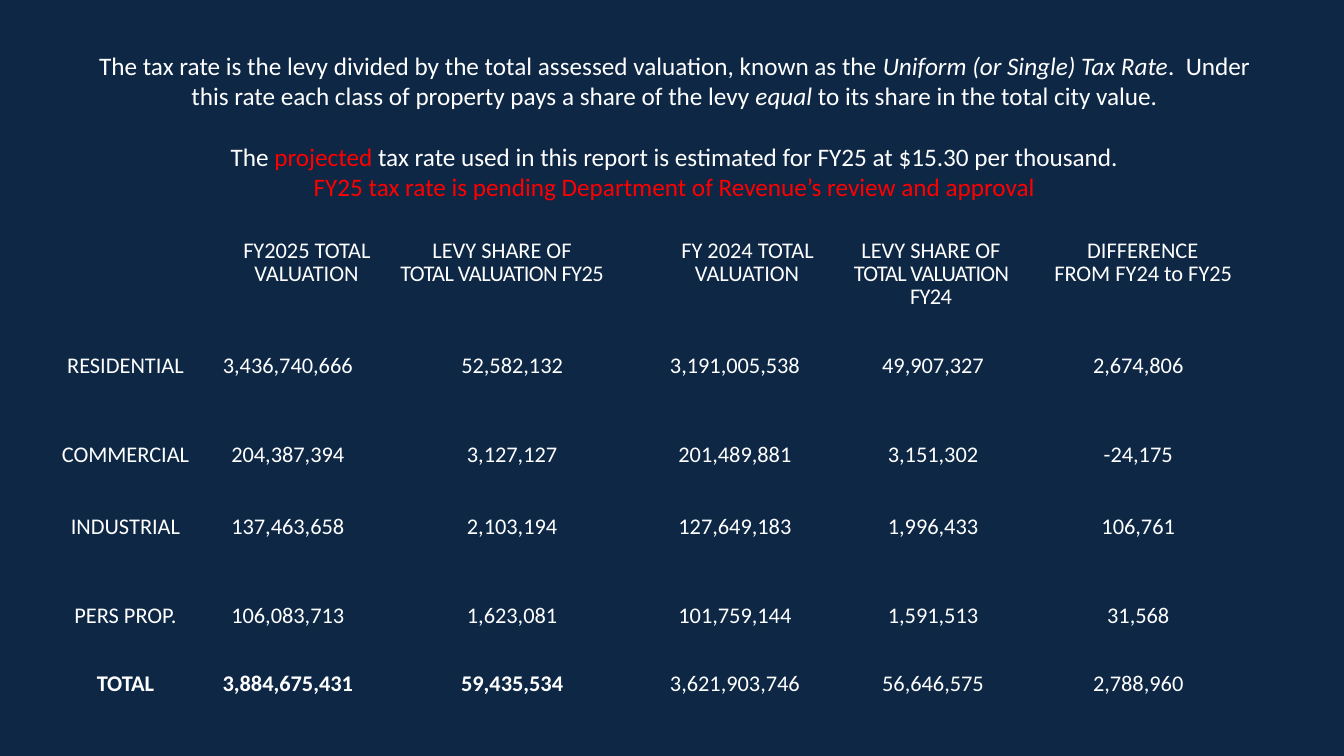
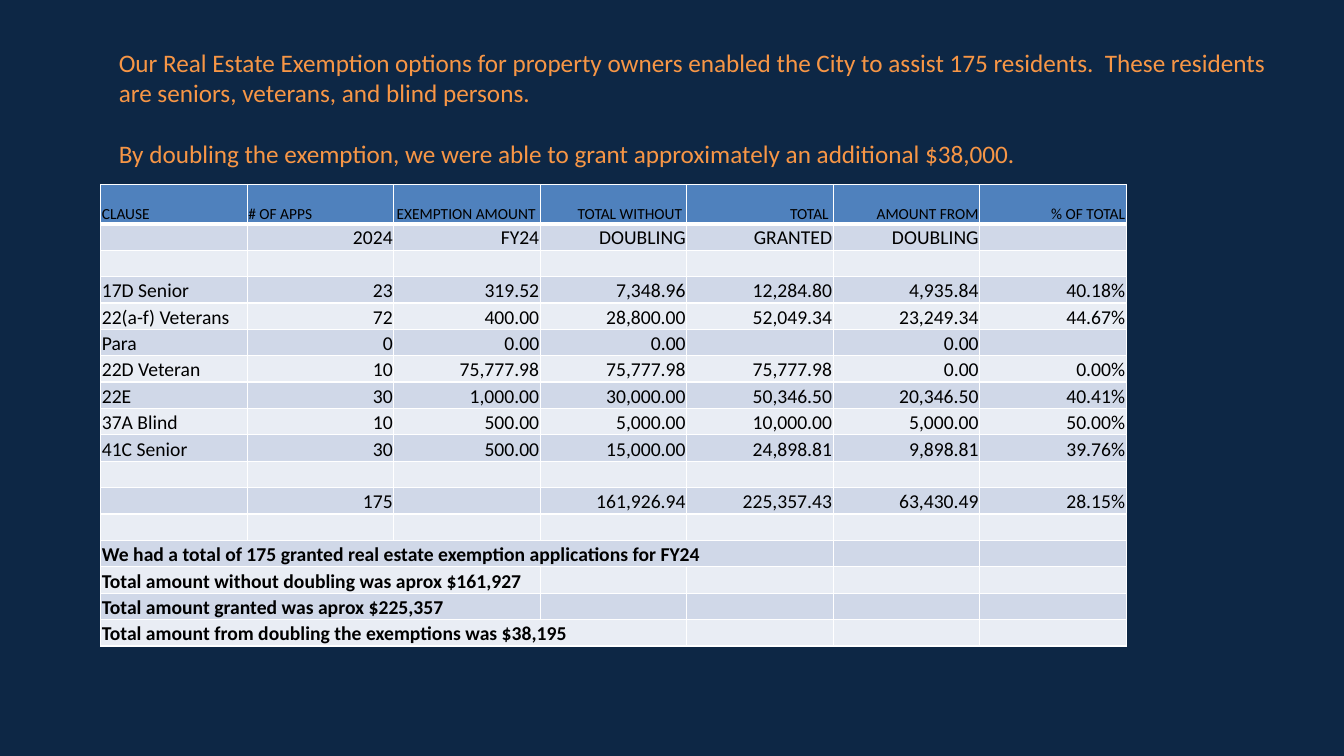
from lxml import etree
from pptx import Presentation
from pptx.dml.color import RGBColor
from pptx.enum.text import MSO_ANCHOR, PP_ALIGN
from pptx.oxml.ns import qn
from pptx.util import Inches, Pt

LEFT, MID, RIGHT = PP_ALIGN.LEFT, PP_ALIGN.CENTER, PP_ALIGN.RIGHT
TOP, BOTTOM = MSO_ANCHOR.TOP, MSO_ANCHOR.BOTTOM
FONT = "Calibri"
NAVY, WHITE, BLACK, RED, ORANGE = "0D2745", "FFFFFF", "000000", "FF0000", "F79646"
BLUE, BANDS = "4F81BD", ("E9EDF4", "D0D8E8")
PLAIN = "{2D5ABB26-0587-4C30-8999-92F81FD0307C}"  # table style: no fill, no grid
GAP = 21.6  # points between the blocks of an intro text

RATE = [
    [("The tax rate is the levy divided by the total assessed valuation, known as the ", ""),
     ("Uniform (or Single) Tax Rate", "italic"),
     (".  Under this rate each class of property pays a share of the levy ", ""),
     ("equal ", "italic"),
     ("to its share in the total city value.", "")],
    [("The ", ""), ("projected ", "red"),
     ("tax rate used in this report is estimated for FY25 at $15.30 per thousand.", "")],
    [("FY25 tax rate is pending Department of Revenue’s review and approval", "red")],
]

# Two lines each: text, left indent, right indent, letter spacing in points
HEADS = [
    [("FY2025 TOTAL", 0.38, 0, 0), ("VALUATION", 0.37, 0, 0)],
    [("LEVY SHARE OF", 0, 0.2, 0), ("TOTAL VALUATION FY25", 0.11, 0.31, -0.4)],
    [("FY 2024 TOTAL", 0.25, 0, 0), ("VALUATION", 0.24, 0, 0)],
    [("LEVY SHARE OF", 0, 0.04, 0), ("TOTAL VALUATION FY24", 0.09, 0.13, -0.5)],
    [("DIFFERENCE", 0.09, 0, 0), ("FROM FY24 to FY25", 0.1, 0, 0)],
]
LEVY = [
    ["RESIDENTIAL", "3,436,740,666", "52,582,132", "3,191,005,538", "49,907,327", "2,674,806"],
    ["COMMERCIAL", "204,387,394", "3,127,127", "201,489,881", "3,151,302", "-24,175"],
    ["INDUSTRIAL", "137,463,658", "2,103,194", "127,649,183", "1,996,433", "106,761"],
    ["PERS PROP.", "106,083,713", "1,623,081", "101,759,144", "1,591,513", "31,568"],
    ["TOTAL", "3,884,675,431", "59,435,534", "3,621,903,746", "56,646,575", "2,788,960"],
]

HELP = [
    "Our Real Estate Exemption options for property owners enabled the City to assist "
    "175 residents.  These residents are seniors, veterans, and blind persons.",
    "By doubling the exemption, we were able to grant approximately an additional $38,000.",
]
CLAUSES = [
    ["CLAUSE", "# OF APPS", "EXEMPTION AMOUNT ", "TOTAL WITHOUT ", "TOTAL ", "AMOUNT FROM",
     "% OF TOTAL"],
    ["", "2024", "FY24", "DOUBLING", "GRANTED", "DOUBLING", ""],
    [""] * 7,
    ["17D Senior", "23", "319.52", "7,348.96", "12,284.80", "4,935.84", "40.18%"],
    ["22(a-f) Veterans", "72", "400.00", "28,800.00", "52,049.34", "23,249.34", "44.67%"],
    ["Para", "0", "0.00", "0.00", "", "0.00", ""],
    ["22D Veteran", "10", "75,777.98", "75,777.98", "75,777.98", "0.00", "0.00%"],
    ["22E", "30", "1,000.00", "30,000.00", "50,346.50", "20,346.50", "40.41%"],
    ["37A Blind", "10", "500.00", "5,000.00", "10,000.00", "5,000.00", "50.00%"],
    ["41C Senior", "30", "500.00", "15,000.00", "24,898.81", "9,898.81", "39.76%"],
    [""] * 7,
    ["", "175", "", "161,926.94", "225,357.43", "63,430.49", "28.15%"],
    [""] * 7,
]
NOTES = [  # text, columns spanned
    ("We had a total of 175 granted real estate exemption applications for FY24", 5),
    ("Total amount without doubling was aprox $161,927", 3),
    ("Total amount granted was aprox $225,357", 3),
    ("Total amount from doubling the exemptions was $38,195", 4),
]


def rgb(code):
    return RGBColor.from_string(code)


def style(run, size, tint, bold=False, italic=False):
    font = run.font
    font.name, font.size, font.bold, font.italic = FONT, Pt(size), bold, italic
    font.color.rgb = rgb(tint)


def add_text(slide, left, top, width, height):
    box = slide.shapes.add_textbox(Inches(left), Inches(top), Inches(width), Inches(height))
    box.text_frame.word_wrap = True
    return box.text_frame


def add_grid(slide, left, top, cols, rows):
    frame = slide.shapes.add_table(len(rows), len(cols), Inches(left), Inches(top),
                                   Inches(sum(cols)), Inches(sum(rows)))
    table = frame.table
    table.first_row = table.horz_banding = False
    table._tbl.tblPr.find(qn("a:tableStyleId")).text = PLAIN
    for col, width in zip(table.columns, cols):
        col.width = Inches(width)
    for row, height in zip(table.rows, rows):
        row.height = Inches(height)
    return table


def pad(cell, inset, anchor):
    cell.margin_left = cell.margin_right = cell.margin_top = Inches(inset)
    cell.margin_bottom = 0
    cell.vertical_anchor = anchor


def fill_cell(cell, text, size, tint, align, bold=False):
    pad(cell, 0.01, BOTTOM)
    cell.text = text
    para = cell.text_frame.paragraphs[0]
    para.alignment = align
    for run in para.runs:
        style(run, size, tint, bold)
    if not text:  # keeps an empty row from growing
        etree.SubElement(para._p, qn("a:endParaRPr"), sz=str(size * 100))


def fill_head(cell, lines):
    pad(cell, 0, TOP)
    cell.text = "\n".join(line[0] for line in lines)
    for para, line, pitch in zip(cell.text_frame.paragraphs, lines, (14.9, 16.4)):
        _, left, right, space = line
        para.alignment, para.line_spacing = MID, Pt(pitch)
        props = para._p.get_or_add_pPr()
        props.set("marL", str(Inches(left)))
        props.set("marR", str(Inches(right)))
        run = para.runs[0]
        style(run, 16, WHITE)
        run.font._element.set("spc", str(round(space * 100)))


def edge(cell, top, bottom):
    """White borders: one point at the sides, given widths above and below."""
    props = cell._tc.get_or_add_tcPr()
    for tag, width in (("lnL", 1), ("lnR", 1), ("lnT", top), ("lnB", bottom)):
        line = etree.SubElement(props, qn("a:" + tag), w=str(Pt(width)))
        fill = etree.SubElement(line, qn("a:solidFill"))
        etree.SubElement(fill, qn("a:srgbClr"), val=WHITE)


def rate_slide(slide):
    frame = add_text(slide, 0.96, 0.49, 11.46, 1.53)
    frame.margin_left = frame.margin_right = frame.margin_bottom = 0
    frame.margin_top = Inches(0.01)
    for i, parts in enumerate(RATE):
        para = frame.add_paragraph() if i else frame.paragraphs[0]
        para.alignment = MID
        if i == 1:
            para.space_before = Pt(GAP)
        for text, look in parts:
            run = para.add_run()
            run.text = text
            style(run, 18, RED if look == "red" else WHITE, italic=look == "italic")

    table = add_grid(slide, 0.58, 2.42, [1.33, 1.89, 2.56, 1.86, 2.07, 2],
                     [0.84, 0.51, 0.88, 0.71, 0.89, 0.67])
    for c, lines in enumerate(HEADS, 1):
        fill_head(table.cell(0, c), lines)
    for r, row in enumerate(LEVY, 1):
        for c, text in enumerate(row):
            bold = r == len(LEVY) and c < 3
            fill_cell(table.cell(r, c), text, 16, WHITE, MID, bold)


def help_slide(slide):
    rows = CLAUSES + [[text] + [""] * 6 for text, _ in NOTES]
    table = add_grid(slide, 1, 1.83, [10.17 / 7] * 7, [0.39] + [4.19 / 16] * 16)
    for r, row in enumerate(rows):
        note = r >= len(CLAUSES)
        for c, text in enumerate(row):
            cell = table.cell(r, c)
            align = LEFT if c == 0 or (r == 0 and c == 1) else RIGHT
            fill_cell(cell, text, 14 if r else 11, BLACK, align, note)
            edge(cell, 3 if r == 1 else 1, 1 if r else 3)
            cell.fill.solid()
            cell.fill.fore_color.rgb = rgb(BANDS[r % 2] if r else BLUE)
    for r, (_, span) in enumerate(NOTES, len(CLAUSES)):
        table.cell(r, 0).merge(table.cell(r, span - 1))

    frame = add_text(slide, 1.08, 0.42, 11.94, 1.31)
    frame.text = "\n".join(HELP)
    for para in frame.paragraphs:
        style(para.runs[0], 18, ORANGE)
    frame.paragraphs[1].space_before = Pt(GAP)


def main():
    deck = Presentation()
    deck.slide_width, deck.slide_height = Inches(13.33), Inches(7.5)
    back = deck.slide_master.background.fill
    back.solid()
    back.fore_color.rgb = rgb(NAVY)
    for build in (rate_slide, help_slide):
        build(deck.slides.add_slide(deck.slide_layouts[6]))
    deck.save("out.pptx")


if __name__ == "__main__":
    main()
